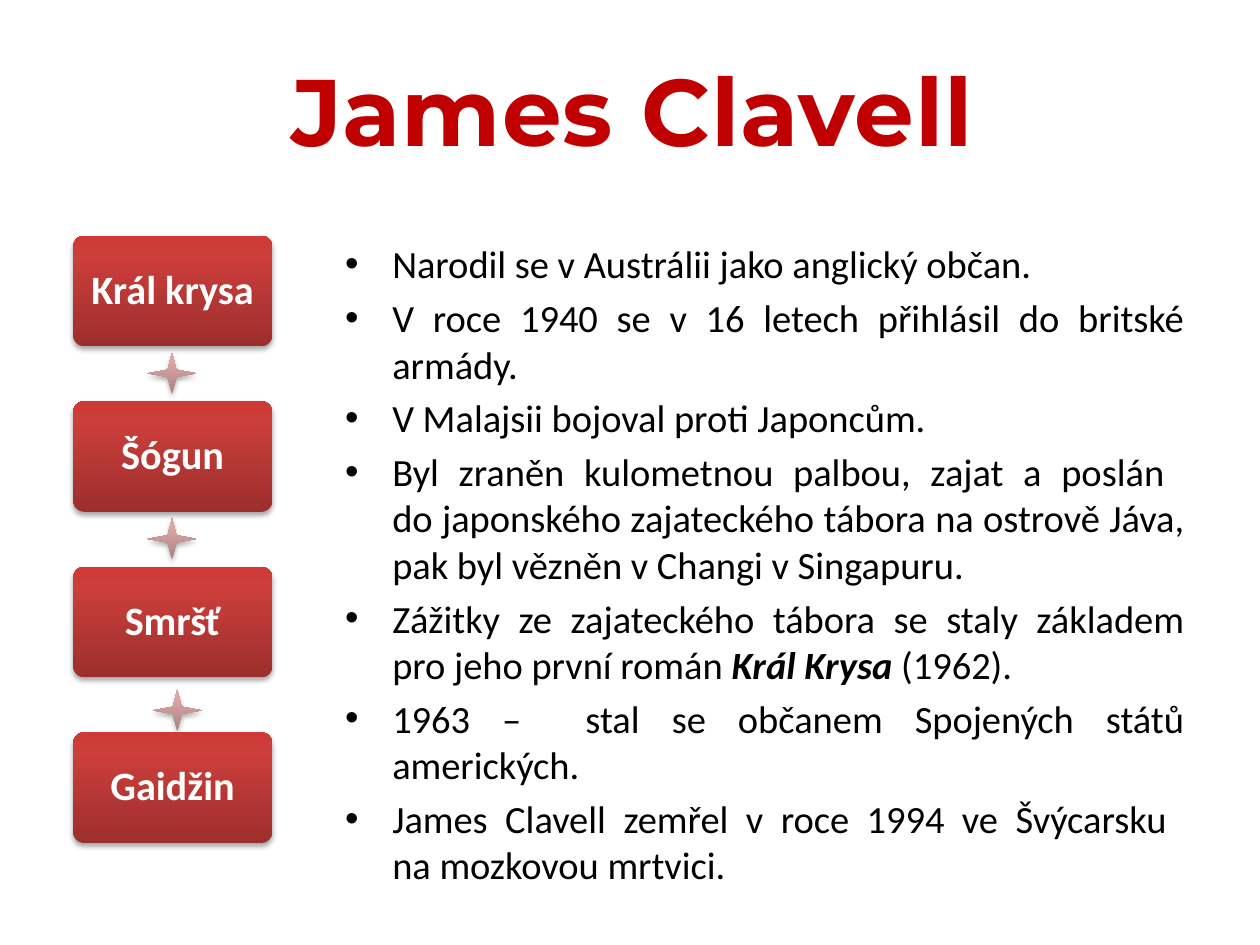
from dataclasses import dataclass

from lxml.etree import SubElement
from pptx import Presentation
from pptx.dml.color import RGBColor
from pptx.enum.shapes import MSO_SHAPE
from pptx.enum.text import MSO_ANCHOR, PP_ALIGN
from pptx.oxml import parse_xml
from pptx.oxml.ns import nsdecls, qn
from pptx.util import Pt

HUES = {"title": "C00000", "body": "000000", "label": "FFFFFF", "shade": "000000"}
BOX_FILL = {0: "9C2F2D", 80: "CB3E3A", 100: "CE3B37"}
STAR_FILL = {0: "A98180", 80: "DBA7A7", 100: "DDA7A6"}

TOP, STEP = 134.7, 94.6
BOX_LEFT, BOX_WIDTH, BOX_HEIGHT = 41.8, 113.8, 63.2
STAR_LEFT, STAR_DROP, STAR_WIDTH, STAR_HEIGHT = 86.4, 64.6, 23.8, 28.1


@dataclass
class Book:
    name: str
    star: bool = True
    shift: tuple[float, float] = (0, 0)


@dataclass
class Fact:
    text: str
    work: str = ""
    tail: str = ""


BOOKS = [
    Book("Král krysa"),
    Book("Šógun"),
    Book("Smršť", shift=(3, 3.4)),
    Book("Gaidžin", star=False),
]

FACTS = [
    Fact("Narodil se v Austrálii jako anglický občan. "),
    Fact("V roce 1940 se v 16 letech přihlásil do britské armády."),
    Fact("V Malajsii bojoval proti Japoncům. "),
    Fact("Byl zraněn kulometnou palbou, zajat a poslán \n"
         "do japonského zajateckého tábora na ostrově Jáva, "
         "pak byl vězněn v Changi v Singapuru. "),
    Fact("Zážitky ze zajateckého tábora se staly základem pro jeho první román ",
         "Král Krysa ", "(1962). "),
    Fact("1963 –  stal se občanem Spojených států amerických."),
    Fact("James Clavell zemřel v roce 1994 ve Švýcarsku \nna mozkovou mrtvici."),
]


def style(para, face: str, size: float, hue: str, bold: bool = False) -> None:
    font = para.font
    font.name, font.size, font.bold = face, Pt(size), bold
    font.color.rgb = RGBColor.from_string(HUES[hue])


def draw_tile(slide, kind, left: float, top: float, width: float,
              height: float, stops: dict[int, str]):
    """Add a shape with an upward gradient, a soft shadow and no outline."""
    tile = slide.shapes.add_shape(kind, Pt(left), Pt(top), Pt(width), Pt(height))
    tile.line.fill.background()
    marks = "".join(f'<a:gs pos="{pos * 1000}"><a:srgbClr val="{hue}"/></a:gs>'
                    for pos, hue in stops.items())
    fill = parse_xml(f'<a:gradFill {nsdecls("a")} rotWithShape="0"><a:gsLst>{marks}'
                     '</a:gsLst><a:lin ang="16200000" scaled="0"/></a:gradFill>')
    shade = parse_xml(
        f'<a:effectLst {nsdecls("a")}><a:outerShdw blurRad="{Pt(3.1)}" '
        f'dist="{Pt(1.8)}" dir="5400000" rotWithShape="0">'
        f'<a:srgbClr val="{HUES["shade"]}"><a:alpha val="35000"/></a:srgbClr>'
        '</a:outerShdw></a:effectLst>')
    props = tile._element.spPr
    props.find(qn("a:prstGeom")).addnext(fill)
    props.append(shade)
    return tile


def draw_book(slide, book: Book, top: float) -> None:
    box = draw_tile(slide, MSO_SHAPE.ROUNDED_RECTANGLE, BOX_LEFT, top,
                    BOX_WIDTH, BOX_HEIGHT, BOX_FILL)
    box.adjustments[0] = 0.1
    frame = box.text_frame
    frame.word_wrap = True
    frame.vertical_anchor = MSO_ANCHOR.MIDDLE
    frame.margin_left = frame.margin_right = Pt(5)
    para = frame.paragraphs[0]
    para.text = book.name
    para.alignment = PP_ALIGN.CENTER
    para.line_spacing = 0.9
    style(para, "Calibri", 23, "label", True)
    if book.star:
        right, down = book.shift
        star = draw_tile(slide, MSO_SHAPE.STAR_4_POINT, STAR_LEFT + right,
                         top + STAR_DROP + down, STAR_WIDTH, STAR_HEIGHT, STAR_FILL)
        star.rotation = 90


def write_fact(para, fact: Fact) -> None:
    para.text = fact.text
    if fact.work:
        run = para.add_run()
        run.text = fact.work
        run.font.bold = run.font.italic = True
        para.add_run().text = fact.tail
    para.alignment = PP_ALIGN.JUSTIFY
    para.space_before = Pt(4.4)
    style(para, "Calibri", 22, "body")
    props = para._p.get_or_add_pPr()
    props.set("marL", str(Pt(27)))
    props.set("indent", str(Pt(-27)))
    dot = parse_xml(f'<a:buChar {nsdecls("a")} char="•"/>')
    face = parse_xml(f'<a:buFont {nsdecls("a")} typeface="Arial"/>')
    props.find(qn("a:defRPr")).addprevious(face)
    face.addnext(dot)


def draw_title(slide, text: str) -> None:
    frame = slide.shapes.add_textbox(Pt(144.7), Pt(25.9), Pt(433.4), Pt(72.7)).text_frame
    frame.word_wrap = True
    para = frame.paragraphs[0]
    para.text = text
    para.alignment = PP_ALIGN.CENTER
    style(para, "Montserrat", 54, "title", True)
    para.runs[0].font._element.set("spc", "50")


def draw_facts(slide) -> None:
    frame = slide.shapes.add_textbox(Pt(190.1), Pt(133.9), Pt(493.9), Pt(391.7)).text_frame
    frame.word_wrap = True
    for index, fact in enumerate(FACTS):
        para = frame.add_paragraph() if index else frame.paragraphs[0]
        write_fact(para, fact)


def main() -> None:
    deck = Presentation()
    deck.slide_width, deck.slide_height = Pt(720), Pt(540)
    slide = deck.slides.add_slide(deck.slide_layouts[6])
    draw_title(slide, "James Clavell")
    draw_facts(slide)
    for index, book in enumerate(BOOKS):
        draw_book(slide, book, TOP + index * STEP)
    deck.save("out.pptx")


if __name__ == "__main__":
    main()
